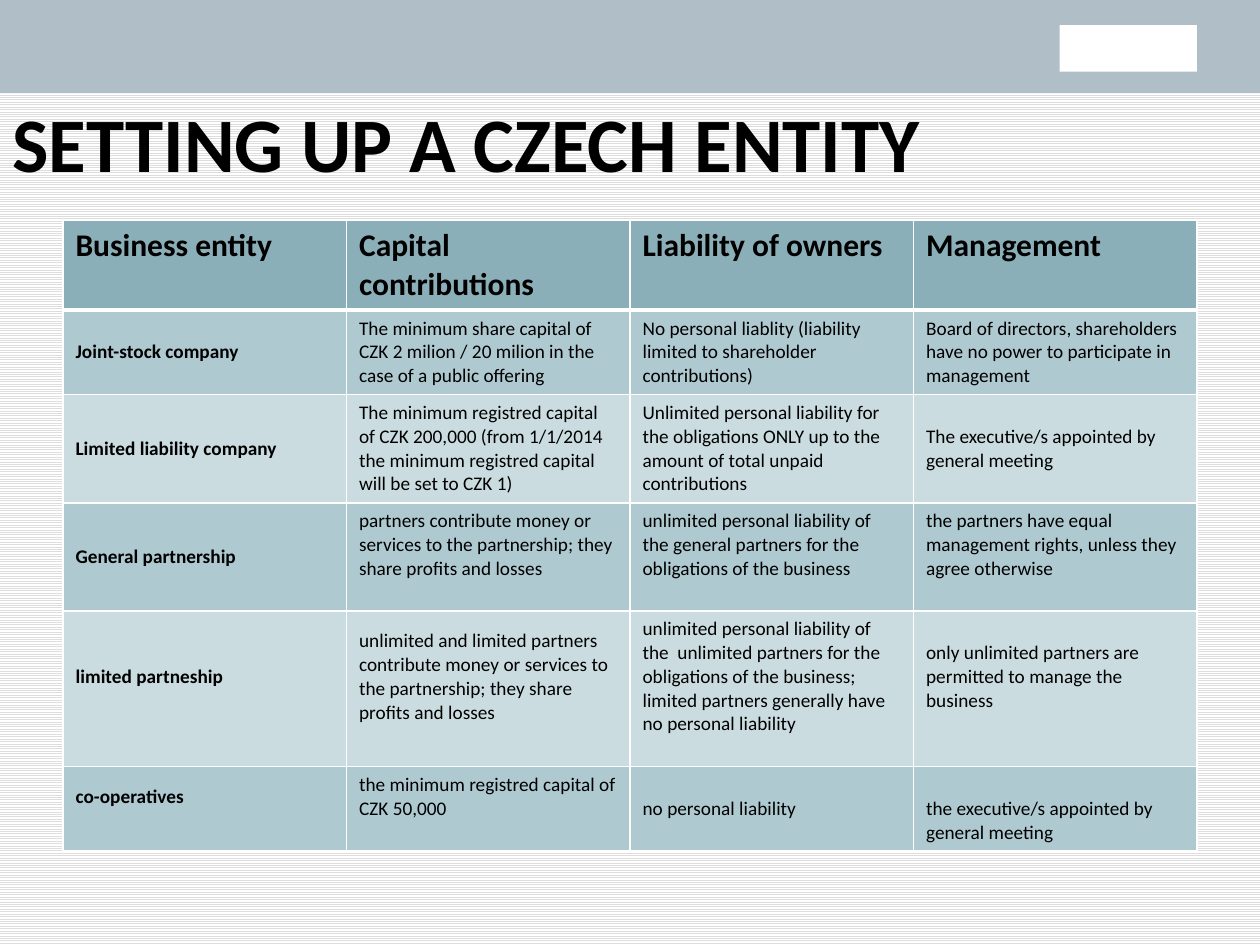
from dataclasses import dataclass

from lxml import etree
from pptx import Presentation
from pptx import util as u
from pptx.dml.color import RGBColor
from pptx.enum import dml, shapes, text
from pptx.oxml.ns import qn

TITLE = "SETTING UP A CZECH ENTITY"
HEADINGS = ["Business entity", "Capital contributions", "Liability of owners", "Management"]
ENTITIES = [
    ["Joint-stock company",
     "The minimum share capital of CZK 2 milion / 20 milion in the case of a public offering",
     "No personal liablity (liability limited to shareholder contributions)",
     "Board of directors, shareholders have no power to participate in management"],
    ["Limited liability company",
     "The minimum registred capital of CZK 200,000 (from 1/1/2014 the minimum registred capital "
     "will be set to CZK 1)",
     "Unlimited personal liability for the obligations ONLY up to the amount of total unpaid "
     "contributions",
     "The executive/s appointed by general meeting"],
    ["General partnership",
     "partners contribute money or services to the partnership; they share profits and losses",
     "unlimited personal liability of the general partners for the obligations of the business",
     "the partners have equal management rights, unless they agree otherwise"],
    ["limited partneship",
     "unlimited and limited partners contribute money or services to the partnership; they share "
     "profits and losses",
     "unlimited personal liability of the  unlimited partners for the obligations of the business; "
     "limited partners generally have no personal liability",
     "only unlimited partners are permitted to manage the business"],
    ["co-operatives",
     "the minimum registred capital of CZK 50,000",
     "no personal liability",
     "the executive/s appointed by general meeting"],
]
ROW_HEIGHTS = [0.71, 0.67, 0.86, 0.86, 1.23, 0.67]
SPACE_BELOW = {(3, 1), (3, 2), (3, 3), (4, 0), (4, 1), (4, 2), (4, 3), (5, 0), (5, 1)}
SPACE_ABOVE = {(5, 3)}


@dataclass(frozen=True)
class Theme:
    font: str = "Calibri"
    ink: str = "000000"
    white: str = "FFFFFF"
    stripe: str = "DDDDDD"
    band: str = "B0BEC7"
    header: str = "8AAFB8"
    rows: tuple = ("AFC9D1", "CADCE0")
    title_size: int = 44
    header_size: int = 18
    body_size: int = 11
    cell_margin: float = 0.05
    spare_line: float = 0.19


THEME = Theme()


def write(frame, words, size, bold=False):
    paragraph = frame.paragraphs[0]
    paragraph.alignment = text.PP_ALIGN.LEFT
    run = paragraph.add_run()
    run.text = words
    run.font.name = THEME.font
    run.font.size = u.Pt(size)
    run.font.bold = bold
    run.font.color.rgb = RGBColor.from_string(THEME.ink)


def add_block(slide, left, top, width, height, color):
    block = slide.shapes.add_shape(
        shapes.MSO_SHAPE.RECTANGLE, *map(u.Inches, (left, top, width, height)))
    block.shadow.inherit = False
    block.fill.solid()
    block.fill.fore_color.rgb = RGBColor.from_string(color)
    block.line.fill.background()


def set_borders(cell, **points):
    properties = cell._tc.get_or_add_tcPr()
    for side in "LRTB":
        line = etree.SubElement(properties, qn(f"a:ln{side}"), w=str(u.Pt(points.get(side, 1))))
        fill = etree.SubElement(line, qn("a:solidFill"))
        etree.SubElement(fill, qn("a:srgbClr"), val=THEME.white)


def fill_cell(cell, row, column, words):
    is_header = row == 0
    set_borders(cell, T=3 if row == 1 else 1, B=3 if is_header else 1)
    color = THEME.header if is_header else THEME.rows[(row - 1) % 2]
    cell.fill.solid()
    cell.fill.fore_color.rgb = RGBColor.from_string(color)
    cell.vertical_anchor = text.MSO_ANCHOR.TOP if is_header else text.MSO_ANCHOR.MIDDLE
    place = (row, column)
    cell.margin_top = u.Inches(THEME.cell_margin + THEME.spare_line * (place in SPACE_ABOVE))
    cell.margin_bottom = u.Inches(THEME.cell_margin + THEME.spare_line * (place in SPACE_BELOW))
    write(cell.text_frame, words, THEME.header_size if is_header else THEME.body_size,
          bold=is_header or column == 0)


def main():
    deck = Presentation()
    deck.slide_width, deck.slide_height = u.Inches(10), u.Inches(7.5)
    slide = deck.slides.add_slide(deck.slide_layouts[5])

    backdrop = slide.background.fill
    backdrop.patterned()
    backdrop.pattern = dml.MSO_PATTERN.LIGHT_HORIZONTAL
    backdrop.fore_color.rgb = RGBColor.from_string(THEME.stripe)
    backdrop.back_color.rgb = RGBColor.from_string(THEME.white)

    add_block(slide, 0, 0, 10, 0.74, THEME.band)
    add_block(slide, 8.41, 0.2, 1.09, 0.37, THEME.white)

    title = slide.shapes.title
    title.left, title.top, title.width, title.height = map(u.Inches, (0, 0.5, 9, 1.25))
    title.text_frame.vertical_anchor = text.MSO_ANCHOR.MIDDLE
    write(title.text_frame, TITLE, THEME.title_size, bold=True)

    content = [HEADINGS, *ENTITIES]
    table = slide.shapes.add_table(
        len(content), len(HEADINGS),
        *map(u.Inches, (0.5, 1.75, 9, sum(ROW_HEIGHTS)))).table
    for row, (words_in_row, height) in enumerate(zip(content, ROW_HEIGHTS)):
        table.rows[row].height = u.Inches(height)
        for column, words in enumerate(words_in_row):
            fill_cell(table.cell(row, column), row, column, words)

    deck.save("out.pptx")


if __name__ == "__main__":
    main()
